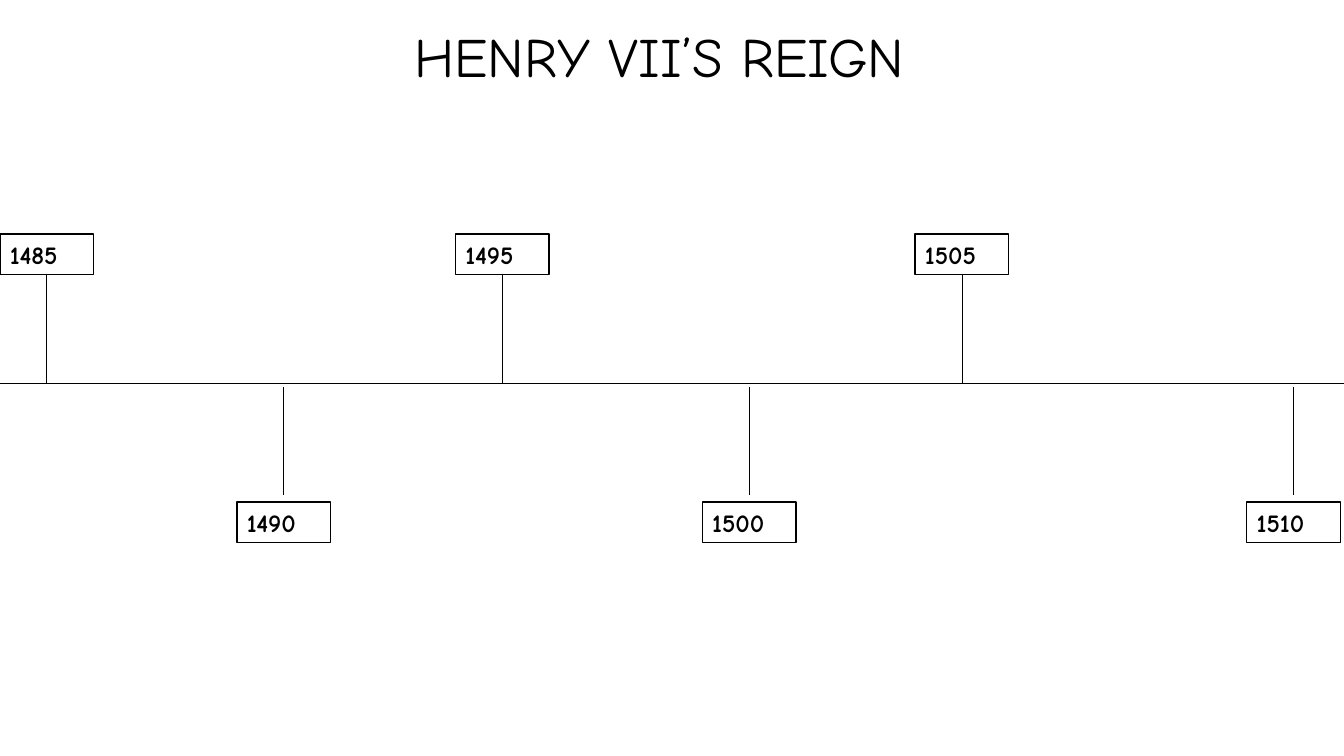
from lxml import etree
from pptx import Presentation
from pptx.dml.color import RGBColor
from pptx.enum.shapes import MSO_CONNECTOR, MSO_SHAPE
from pptx.enum.text import MSO_ANCHOR, MSO_AUTO_SIZE, PP_ALIGN
from pptx.oxml.ns import qn
from pptx.util import Cm, Pt

STRAIGHT = MSO_CONNECTOR.STRAIGHT
RECTANGLE = MSO_SHAPE.RECTANGLE
MIDDLE, TOP = MSO_ANCHOR.MIDDLE, MSO_ANCHOR.TOP
GROW = MSO_AUTO_SIZE.SHAPE_TO_FIT_TEXT
CENTER, LEFT = PP_ALIGN.CENTER, PP_ALIGN.LEFT

BLACK = RGBColor(0x00, 0x00, 0x00)
WHITE = RGBColor(0xFF, 0xFF, 0xFF)
FONT = "Comic Neue"

SLIDE_W, SLIDE_H = Cm(33.87), Cm(19.05)
BOX_W, BOX_H = Cm(2.36), Cm(1.02)
AXIS_Y = Cm(9.65)
UPPER_BOX_TOP, LOWER_BOX_TOP = Cm(5.9), Cm(12.65)
LOWER_STEM_TOP, LOWER_STEM_END = Cm(9.75), Cm(12.47)
UPPER_YEARS = [("1485", 0), ("1495", 11.48), ("1505", 23.06)]
LOWER_YEARS = [("1490", 5.97), ("1500", 17.7), ("1510", 31.42)]


def write_text(sp, text, size, align, anchor, bold=False):
    """Put one styled paragraph into a shape."""
    tf = sp.text_frame
    tf.word_wrap = True
    tf.vertical_anchor = anchor
    p = tf.paragraphs[0]
    p.text = text
    p.alignment = align
    p.font.name = FONT
    p.font.size = Pt(size)
    p.font.bold = bold
    p.font.color.rgb = BLACK
    return p


def add_title(s, text):
    """Add the centred heading."""
    sp = s.shapes.add_textbox(Cm(2.01), Cm(0.58), Cm(29.21), Cm(1.85))
    p = write_text(sp, text, 39.6, CENTER, MIDDLE)
    p.line_spacing = 0.9


def add_line(s, x1, y1, x2, y2):
    """Add a thin black line without shadow."""
    line = s.shapes.add_connector(STRAIGHT, x1, y1, x2, y2)
    line.line.color.rgb = BLACK
    line.line.width = Pt(0.5)
    etree.SubElement(line._element.spPr, qn("a:effectLst"))
    return line


def add_year_box(s, year, left, top):
    """Add an outlined box holding a year."""
    sp = s.shapes.add_shape(RECTANGLE, left, top, BOX_W, BOX_H)
    sp.shadow.inherit = False
    sp.fill.solid()
    sp.fill.fore_color.rgb = WHITE
    sp.line.color.rgb = BLACK
    sp.line.width = Pt(1)
    write_text(sp, year, 18, LEFT, TOP, bold=True)
    sp.text_frame.auto_size = GROW
    return sp


def add_upper_year(s, year, left):
    """Add a year above the axis, its stem joined to the box."""
    sp = add_year_box(s, year, left, UPPER_BOX_TOP)
    x = left + BOX_W // 2
    stem = add_line(s, x, AXIS_Y, x, UPPER_BOX_TOP + BOX_H)
    stem.end_connect(sp, 2)


def add_lower_year(s, year, left):
    """Add a year below the axis, its stem standing free."""
    add_year_box(s, year, left, LOWER_BOX_TOP)
    x = left + BOX_W // 2
    add_line(s, x, LOWER_STEM_END, x, LOWER_STEM_TOP)


def main():
    """Build the timeline slide."""
    prs = Presentation()
    prs.slide_width, prs.slide_height = SLIDE_W, SLIDE_H
    s = prs.slides.add_slide(prs.slide_layouts[6])
    add_title(s, "HENRY VII’S REIGN")
    add_line(s, 0, AXIS_Y, SLIDE_W, AXIS_Y)
    for year, left in UPPER_YEARS:
        add_upper_year(s, year, Cm(left))
    for year, left in LOWER_YEARS:
        add_lower_year(s, year, Cm(left))
    prs.save("out.pptx")


if __name__ == "__main__":
    main()
